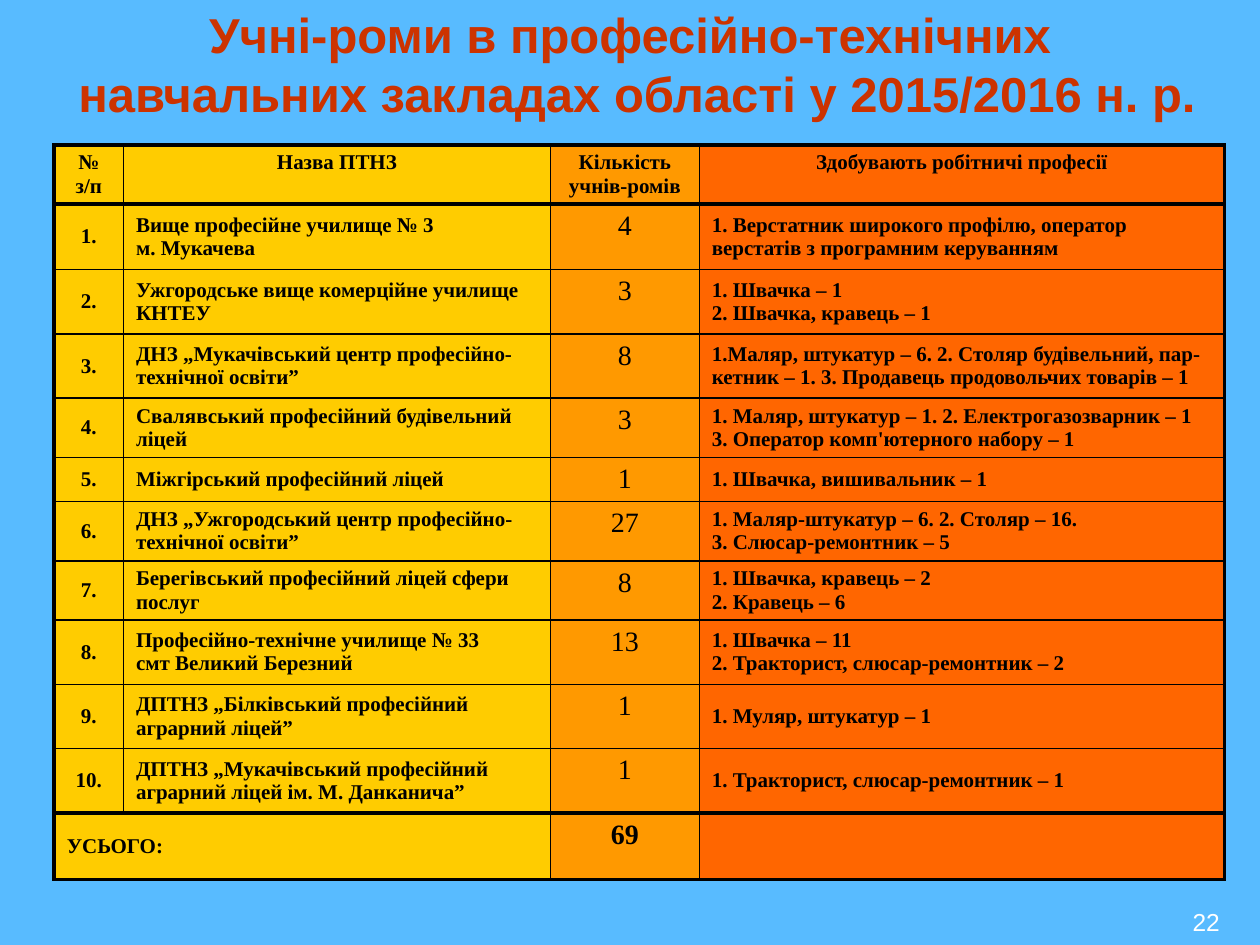
from lxml.etree import SubElement
from pptx import Presentation
from pptx.dml.color import RGBColor
from pptx.enum.text import MSO_ANCHOR, MSO_AUTO_SIZE, PP_ALIGN
from pptx.oxml.ns import qn
from pptx.util import Inches, Pt

SERIF = {"name": "Times New Roman", "bold": True, "color": "000000"}


def colour(value):
    return RGBColor.from_string(value)


def write(frame, lines, align, anchor, look):
    """Fill a text frame with paragraphs that share one look."""
    frame.word_wrap = True
    frame.vertical_anchor = anchor
    frame.text = "\n".join(lines)
    for para in frame.paragraphs:
        para.alignment = align
        for font in [para.font] + [span.font for span in para.runs]:
            for key, value in look.items():
                if key == "color":
                    font.color.rgb = colour(value)
                else:
                    setattr(font, key, value)


deck = Presentation()
deck.slide_width, deck.slide_height = Inches(10), Inches(7.5)
page = deck.slides.add_slide(deck.slide_layouts[5])
page.background.fill.solid()
page.background.fill.fore_color.rgb = colour("58BBFF")

# Title
title = page.shapes.title
title.left, title.top, title.width, title.height = map(Inches, (0.29, 0.07, 9.53, 0.86))
title.text_frame.auto_size = MSO_AUTO_SIZE.NONE
write(title.text_frame,
      ["Учні-роми в професійно-технічних \vнавчальних закладах області у 2015/2016 н. р."],
      PP_ALIGN.CENTER, MSO_ANCHOR.MIDDLE,
      {"name": "Arial", "size": Pt(28), "bold": True, "color": "CC3300"})

# Table content: school, number of pupils, trades
header = ["№ з/п", "Назва ПТНЗ", "Кількість учнів-ромів", "Здобувають робітничі професії"]
schools = [
    ("Вище професійне училище № 3\nм. Мукачева", 4,
     "1. Верстатник широкого профілю, оператор верстатів з програмним керуванням"),
    ("Ужгородське вище комерційне училище КНТЕУ", 3,
     "1. Швачка – 1\n2. Швачка, кравець – 1"),
    ("ДНЗ „Мукачівський центр професійно-технічної освіти”", 8,
     "1.Маляр, штукатур – 6. 2. Столяр будівельний, пар-кетник – 1. "
     "3. Продавець продовольчих товарів – 1"),
    ("Свалявський професійний будівельний ліцей", 3,
     "1. Маляр, штукатур – 1. 2. Електрогазозварник – 1\n3. Оператор комп'ютерного набору – 1"),
    ("Міжгірський професійний ліцей", 1, "1. Швачка, вишивальник – 1"),
    ("ДНЗ „Ужгородський центр професійно-технічної освіти”", 27,
     "1. Маляр-штукатур – 6. 2. Столяр – 16.\n3. Слюсар-ремонтник – 5"),
    ("Берегівський професійний ліцей сфери послуг", 8,
     "1. Швачка, кравець – 2\n2. Кравець – 6"),
    ("Професійно-технічне училище № 33\nсмт Великий Березний", 13,
     "1. Швачка – 11\n2. Тракторист, слюсар-ремонтник – 2"),
    ("ДПТНЗ „Білківський професійний аграрний ліцей”", 1, "1. Муляр, штукатур – 1"),
    ("ДПТНЗ „Мукачівський професійний аграрний ліцей ім. М. Данканича”", 1,
     "1. Тракторист, слюсар-ремонтник – 1"),
]
total = sum(count for name, count, trades in schools)
rows = [header]
rows += [[f"{number}.", name, str(count), trades]
         for number, (name, count, trades) in enumerate(schools, 1)]
rows.append(["УСЬОГО:", "", str(total), ""])

# Table grid
widths = [0.55, 3.39, 1.18, 4.17]
heights = [0.47, 0.52, 0.51, 0.51, 0.47, 0.35, 0.47, 0.47, 0.51, 0.51, 0.51, 0.53]
fills = ["FFCC00", "FFCC00", "FF9900", "FF6600"]
last_row, last_column = len(rows) - 1, len(widths) - 1
table = page.shapes.add_table(len(rows), len(widths), Inches(0.43), Inches(1.15),
                              Inches(sum(widths)), Inches(sum(heights))).table
table.first_row = table.horz_banding = False
for column, width in zip(table.columns, widths):
    column.width = Inches(width)
for row, height in zip(table.rows, heights):
    row.height = Inches(height)

# Cells: text, borders and fill
for r, texts in enumerate(rows):
    for c, text in enumerate(texts):
        cell = table.cell(r, c)
        is_count = c == 2 and r > 0
        centred = r == 0 or c == 2 or (c == 0 and r < last_row)
        at_top = c == 2 or (r == 0 and c > 0)
        anchor = MSO_ANCHOR.TOP if at_top else MSO_ANCHOR.MIDDLE
        look = SERIF | {"size": Pt(16 if is_count else 12),
                        "bold": not is_count or r == last_row}
        write(cell.text_frame, text.split("\n"),
              PP_ALIGN.CENTER if centred else PP_ALIGN.LEFT, anchor, look)
        cell.vertical_anchor = anchor
        thick = {"a:lnL": c == 0, "a:lnR": c == last_column,
                 "a:lnT": r in (0, 1, last_row),
                 "a:lnB": r in (0, last_row - 1, last_row)}
        for edge, heavy in thick.items():
            line = SubElement(cell._tc.get_or_add_tcPr(), qn(edge),
                              w=str(Pt(2.25 if heavy else 1)))
            SubElement(SubElement(line, qn("a:solidFill")), qn("a:srgbClr"), val="000000")
        cell.fill.solid()
        cell.fill.fore_color.rgb = colour(fills[c])
table.cell(last_row, 0).merge(table.cell(last_row, 1))

# Page number
box = page.shapes.add_textbox(*map(Inches, (7.45, 6.96, 2.33, 0.52)))
write(box.text_frame, ["22"], PP_ALIGN.RIGHT, MSO_ANCHOR.BOTTOM,
      {"name": "Arial", "size": Pt(14), "color": "FFFFFF"})

deck.save("out.pptx")
